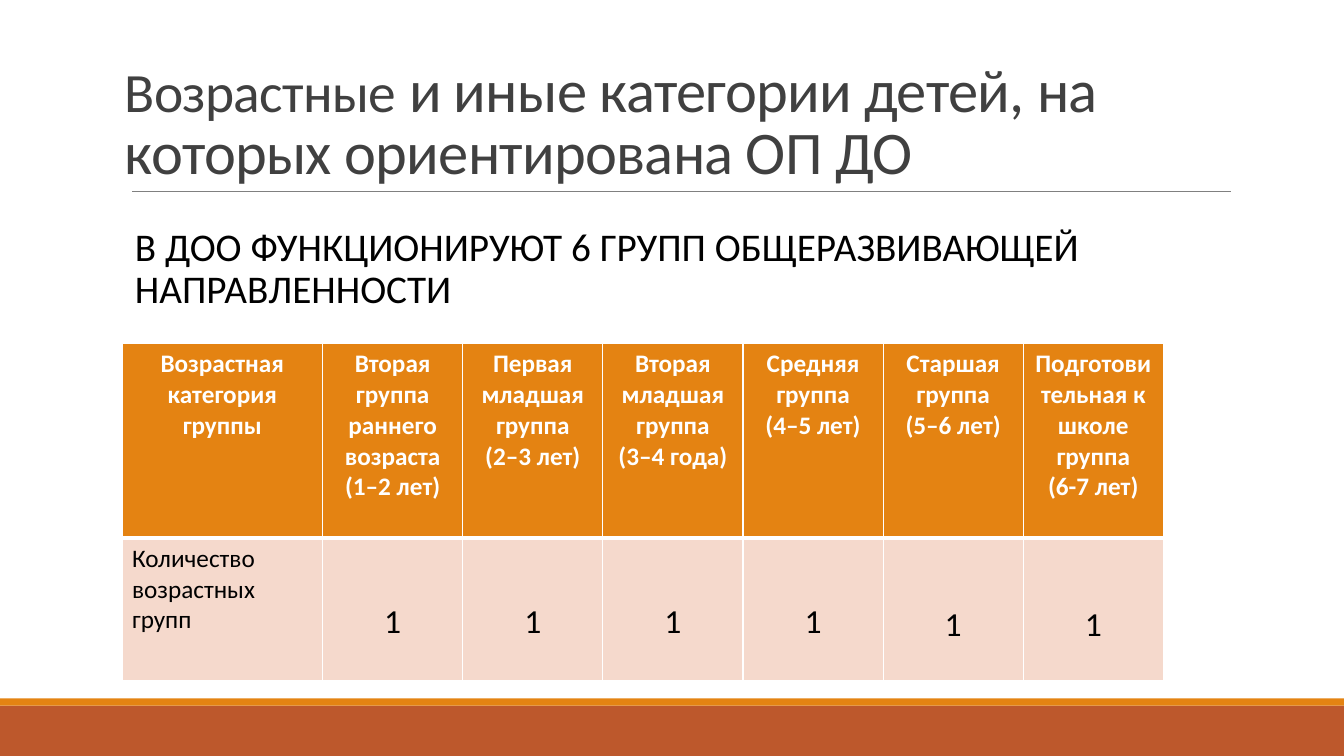
import pptx
import pptx.dml.color
import pptx.enum.shapes
import pptx.enum.text
import pptx.oxml
import pptx.oxml.ns
import pptx.util
from pptx.util import Inches

RGBColor = pptx.dml.color.RGBColor
ALIGN = pptx.enum.text.PP_ALIGN
ANCHOR = pptx.enum.text.MSO_ANCHOR

WHITE = RGBColor(0xFF, 0xFF, 0xFF)
BLACK = RGBColor(0, 0, 0)
DARK_GRAY = RGBColor(0x40, 0x40, 0x40)
RULE_GRAY = RGBColor(0x80, 0x80, 0x80)
ORANGE = RGBColor(0xE4, 0x83, 0x12)
RUST = RGBColor(0xBD, 0x58, 0x2C)
PALE = RGBColor(0xF5, 0xD9, 0xCC)

AGE_GROUPS = [
    ["Возрастная категория группы"],
    ["Вторая группа раннего возраста", "(1–2 лет)"],
    ["Первая младшая группа", "(2–3 лет)"],
    ["Вторая младшая группа", "(3–4 года)"],
    ["Средняя группа", "(4–5 лет)"],
    ["Старшая группа", "(5–6 лет)"],
    ["Подготовительная к школе группа", "(6-7 лет)"],
]
GROUP_COUNTS = ["1"] * 6
TIGHT_COUNTS = 4  # leading count cells with narrow margins


class SlideBuilder:
    font = "Calibri"

    def __init__(self, slide):
        self.slide = slide

    def band(self, top, height, color):
        shape = self.slide.shapes.add_shape(
            pptx.enum.shapes.MSO_SHAPE.RECTANGLE,
            0, Inches(top), Inches(13.33), Inches(height))
        shape.shadow.inherit = False
        shape.fill.solid()
        shape.fill.fore_color.rgb = color
        shape.line.fill.background()

    def rule(self, left, right, top):
        line = self.slide.shapes.add_connector(
            pptx.enum.shapes.MSO_CONNECTOR.STRAIGHT,
            Inches(left), Inches(top), Inches(right), Inches(top))
        line.line.color.rgb = RULE_GRAY
        line.line.width = pptx.util.Pt(0.5)
        pptx.oxml.ns.qn("a:effectLst")
        line._element.spPr.append(pptx.oxml.parse_xml(
            f"<a:effectLst {pptx.oxml.ns.nsdecls('a')}/>"))

    def run(self, paragraph, text, size, color, bold=False, spacing=None):
        run = paragraph.add_run()
        run.text = text
        run.font.name = self.font
        run.font.size = pptx.util.Pt(size)
        run.font.color.rgb = color
        run.font.bold = bold
        if spacing is not None:
            run.font._element.set("spc", str(round(spacing * 100)))

    def text_box(self, left, top, width, height, anchor, line_spacing):
        box = self.slide.shapes.add_textbox(
            Inches(left), Inches(top), Inches(width), Inches(height))
        frame = box.text_frame
        frame.word_wrap = True
        frame.vertical_anchor = anchor
        paragraph = frame.paragraphs[0]
        paragraph.line_spacing = line_spacing
        return paragraph

    def table(self, left, top, column_widths, row_heights):
        frame = self.slide.shapes.add_table(
            len(row_heights), len(column_widths), Inches(left), Inches(top),
            Inches(sum(column_widths)), Inches(sum(row_heights)))
        table = frame.table
        for column, width in zip(table.columns, column_widths):
            column.width = Inches(width)
        for row, height in zip(table.rows, row_heights):
            row.height = Inches(height)
        return table

    def cell(self, cell, lines, size, color, fill, bold=False,
             align=ALIGN.CENTER, line_spacing=None, top=1, bottom=1):
        frame = cell.text_frame
        for index, text in enumerate(lines):
            paragraph = frame.add_paragraph() if index else frame.paragraphs[0]
            paragraph.alignment = align
            paragraph.line_spacing = line_spacing
            self.run(paragraph, text, size, color, bold)
        self.borders(cell, {"L": 1, "R": 1, "T": top, "B": bottom})
        cell.fill.solid()
        cell.fill.fore_color.rgb = fill

    def borders(self, cell, widths):
        properties = cell._tc.get_or_add_tcPr()
        for side, width in widths.items():
            properties.append(pptx.oxml.parse_xml(
                f"<a:ln{side} {pptx.oxml.ns.nsdecls('a')} w='{pptx.util.Pt(width)}'>"
                f"<a:solidFill><a:srgbClr val='{WHITE}'/></a:solidFill></a:ln{side}>"))


def main():
    presentation = pptx.Presentation()
    presentation.slide_width = Inches(13.33)
    presentation.slide_height = Inches(7.5)
    builder = SlideBuilder(
        presentation.slides.add_slide(presentation.slide_layouts[6]))

    # Footer bands and title rule
    builder.band(7, 0.5, RUST)
    builder.band(6.93, 0.07, ORANGE)
    builder.rule(1.31, 12.21, 1.9)

    # Title
    title = builder.text_box(1.14, 0.31, 11, 1.59, ANCHOR.BOTTOM, 0.85)
    builder.run(title, "Возрастные", 39.6, DARK_GRAY, spacing=-0.5)
    builder.run(title, " и иные категории детей, на которых ориентирована ОП ДО",
                43.2, DARK_GRAY, spacing=-0.5)

    # Subtitle
    subtitle = builder.text_box(1.24, 2.28, 9.91, 0.79, ANCHOR.MIDDLE, 0.9)
    subtitle.space_before = pptx.util.Pt(12)
    subtitle.space_after = pptx.util.Pt(2)
    builder.run(subtitle,
                "В ДОО ФУНКЦИОНИРУЮТ 6 ГРУПП ОБЩЕРАЗВИВАЮЩЕЙ НАПРАВЛЕННОСТИ",
                28, BLACK)

    # Age group table
    table = builder.table(1.21, 3.41, [1.99] + [1.39] * 6, [1.93, 1.41])
    for column, lines in enumerate(AGE_GROUPS):
        builder.cell(table.cell(0, column), lines, 18, WHITE, ORANGE,
                     bold=True, bottom=3)
    builder.cell(table.cell(1, 0), ["Количество возрастных групп"], 18, BLACK,
                 PALE, align=ALIGN.LEFT, top=3)
    for column, count in enumerate(GROUP_COUNTS, start=1):
        cell = table.cell(1, column)
        if column <= TIGHT_COUNTS:
            cell.margin_left = cell.margin_right = Inches(0.05)
            cell.margin_top = cell.margin_bottom = Inches(0.02)
        builder.cell(cell, [count], 24, BLACK, PALE, line_spacing=2.5, top=3)

    presentation.save("out.pptx")


if __name__ == "__main__":
    main()
